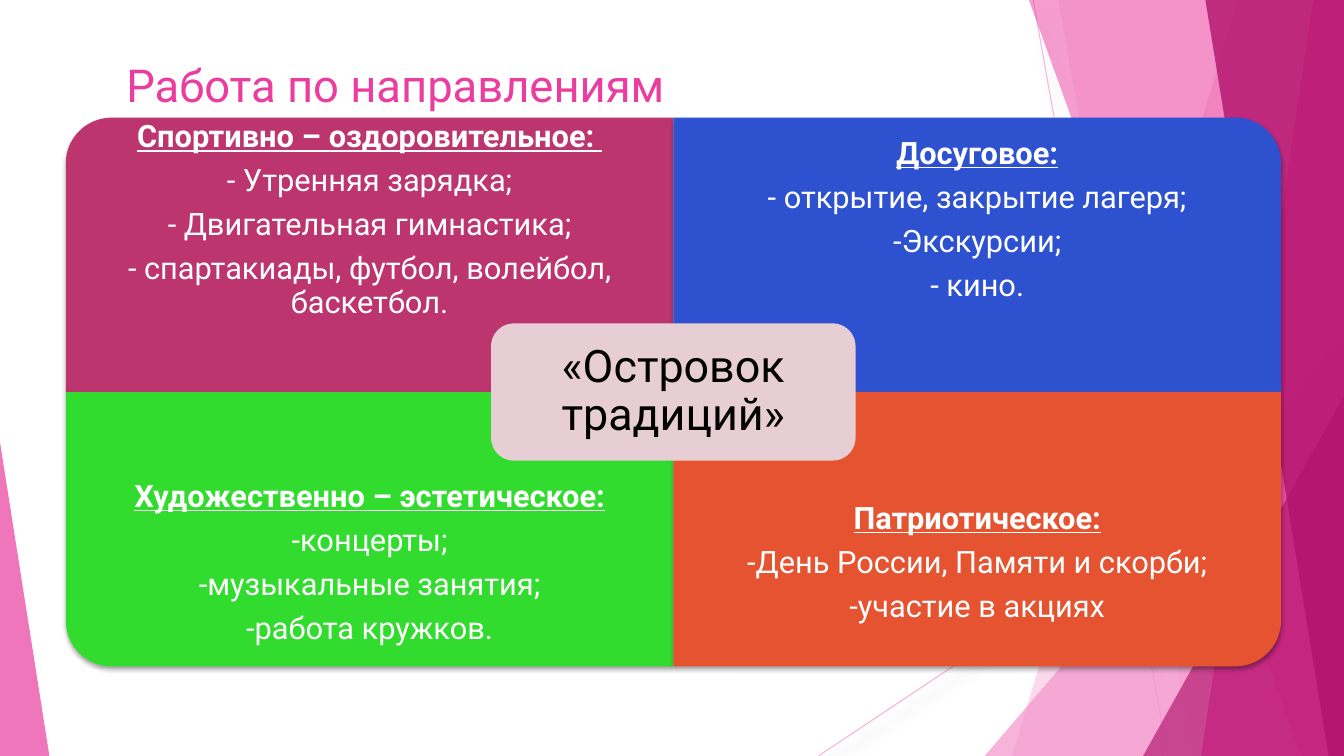
from lxml import etree
from pptx import Presentation
from pptx.dml.color import RGBColor
from pptx.enum.shapes import MSO_CONNECTOR, MSO_SHAPE
from pptx.enum.text import MSO_ANCHOR, PP_ALIGN
from pptx.oxml.ns import qn
from pptx.util import Pt

STRAIGHT = MSO_CONNECTOR.STRAIGHT
TRIANGLE = MSO_SHAPE.ISOSCELES_TRIANGLE
ROUND_ONE = MSO_SHAPE.ROUND_1_RECTANGLE
ROUNDED = MSO_SHAPE.ROUNDED_RECTANGLE
MIDDLE = MSO_ANCHOR.MIDDLE
LEFT, CENTER = PP_ALIGN.LEFT, PP_ALIGN.CENTER

FONT = "Roboto"
WIDTH, HEIGHT = 960, 540
COLORS = {
    "light": "F496CB",
    "pink": "EB3D9F",
    "dark": "B2136D",
    "sport": "BC356F",
    "leisure": "2E52CF",
    "art": "32DC2F",
    "patriotic": "E65331",
    "hub": "E7CED5",
    "white": "FFFFFF",
    "black": "000000",
}

RAYS = [((738, 0), (834, 540)), ((960, 290), (584.6, 540))]
FACETS = [
    ("beam", 884, 723, "light", 36),
    ("beam", 756, 852, "light", 20),
    ("triangle", (703.4, 240, 256.6, 300), 1, "light", 72),
    ("beam", 735, 929.5, "pink", 50),
    ("beam", 938, 858, "pink", 70),
    ("beam", 861, 949, "dark", 80),
    ("triangle", (816.5, 283, 143.5, 257), 1, "dark", 66),
    ("triangle", (0, 316, 35.3, 224), 0, "pink", 70),
]
DIRECTIONS = [
    ("sport", 270, "Спортивно – оздоровительное: ",
     ["- Утренняя зарядка;", "- Двигательная гимнастика;",
      "- спартакиады, футбол, волейбол, баскетбол."]),
    ("leisure", 0, "Досуговое:",
     ["- открытие, закрытие лагеря;", "-Экскурсии;", "- кино."]),
    ("art", 180, "Художественно – эстетическое:",
     ["-концерты;", "-музыкальные занятия;", "-работа кружков."]),
    ("patriotic", 90, "Патриотическое:",
     ["-День России, Памяти и скорби;", "-участие в акциях"]),
]


def points(*lengths):
    return [Pt(length) for length in lengths]


def color(name):
    return RGBColor.from_string(COLORS[name])


def set_alpha(properties, percent):
    target = properties.find(".//" + qn("a:srgbClr"))
    etree.SubElement(target, qn("a:alpha"), val=str(percent * 1000))


def add_shadow(effects, blur, distance, angle):
    shadow = etree.SubElement(
        effects, qn("a:outerShdw"), blurRad=str(Pt(blur)), dist=str(Pt(distance)),
        dir=str(angle * 60000), algn="ctr", rotWithShape="0")
    shade = etree.SubElement(shadow, qn("a:srgbClr"), val=COLORS["black"])
    etree.SubElement(shade, qn("a:alpha"), val="35000")


def paint(shape, name, alpha=None):
    shape.shadow.inherit = False
    shape.fill.solid()
    shape.fill.fore_color.rgb = color(name)
    shape.line.fill.background()
    if alpha is not None:
        set_alpha(shape._element.spPr, alpha)


def write_run(paragraph, text, size, name, heading=False):
    run = paragraph.add_run()
    run.text = text
    run.font.name = FONT
    run.font.size = Pt(size)
    run.font.color.rgb = color(name)
    run.font.bold = heading
    run.font.underline = heading


def write_lines(frame, lines, size, name, inset, has_heading=False):
    frame.word_wrap = True
    frame.vertical_anchor = MIDDLE
    frame.margin_left = frame.margin_right = Pt(inset)
    frame.margin_top = frame.margin_bottom = Pt(inset)
    for index, line in enumerate(lines):
        paragraph = frame.add_paragraph() if index else frame.paragraphs[0]
        paragraph.alignment = CENTER
        paragraph.line_spacing = 0.9
        paragraph.space_after = Pt(0.35 * size)
        write_run(paragraph, line, size, name, has_heading and index == 0)


def add_background(slide, left, top, width, height):
    for (x1, y1), (x2, y2) in RAYS:
        ray = slide.shapes.add_connector(
            STRAIGHT, *points(left + x1, top + y1, left + x2, top + y2))
        ray.line.color.rgb = color("light")
        ray.line.width = Pt(0.75)
        properties = ray._element.spPr
        set_alpha(properties, 70)
        add_shadow(etree.SubElement(properties, qn("a:effectLst")), 10.2, 8, 45)
    right, bottom = left + width, top + height
    for kind, first, second, name, alpha in FACETS:
        if kind == "beam":
            builder = slide.shapes.build_freeform(*points(left + first, top), scale=1.0)
            corners = [(right, top), (right, bottom), (left + second, bottom)]
            builder.add_line_segments([points(*corner) for corner in corners], close=True)
            facet = builder.convert_to_shape()
        else:
            x, y, facet_width, facet_height = first
            facet = slide.shapes.add_shape(
                TRIANGLE, *points(left + x, top + y, facet_width, facet_height))
            facet.adjustments[0] = second
        paint(facet, name, alpha)


def add_title(slide, left, top, width, height):
    title = slide.shapes.title
    title.left, title.top, title.width, title.height = points(left, top, width, height)
    frame = title.text_frame
    frame.vertical_anchor = MIDDLE
    frame.paragraphs[0].alignment = LEFT
    write_run(frame.paragraphs[0], "Работа по направлениям", 32.4, "pink")


def add_quadrant(slide, left, top, width, height, direction, text_at_bottom):
    name, rotation, heading, items = direction
    shape_width, shape_height = (height, width) if rotation % 180 else (width, height)
    quadrant = slide.shapes.add_shape(ROUND_ONE, *points(
        left + (width - shape_width) / 2, top + (height - shape_height) / 2,
        shape_width, shape_height))
    quadrant.rotation = rotation
    paint(quadrant, name)
    add_shadow(quadrant._element.spPr.find(qn("a:effectLst")), 3, 2, 90)
    text_height = height * 0.75
    text_top = top + height - text_height if text_at_bottom else top
    label = slide.shapes.add_textbox(*points(left, text_top, width, text_height))
    write_lines(label.text_frame, [heading, *items], 22, "white", 12.3, True)


def add_matrix(slide, left, top, width, height):
    cell_width, cell_height = width / 2, height / 2
    for index, direction in enumerate(DIRECTIONS):
        row, column = divmod(index, 2)
        add_quadrant(slide, left + column * cell_width, top + row * cell_height,
                     cell_width, cell_height, direction, row == 1)
    hub_width, hub_height = width * 0.3, height * 0.25
    hub = slide.shapes.add_shape(ROUNDED, *points(
        left + (width - hub_width) / 2, top + (height - hub_height) / 2,
        hub_width, hub_height))
    paint(hub, "hub")
    write_lines(hub.text_frame, ["«Островок традиций»"], 32, "black", 9.4)


def main():
    presentation = Presentation()
    presentation.slide_width, presentation.slide_height = points(WIDTH, HEIGHT)
    slide = presentation.slides.add_slide(presentation.slide_layouts[5])
    add_background(slide, 0, 0, WIDTH, HEIGHT)
    add_title(slide, 83, 36, 779, 48)
    add_matrix(slide, 47, 84, 868, 392)
    presentation.save("out.pptx")


if __name__ == "__main__":
    main()
